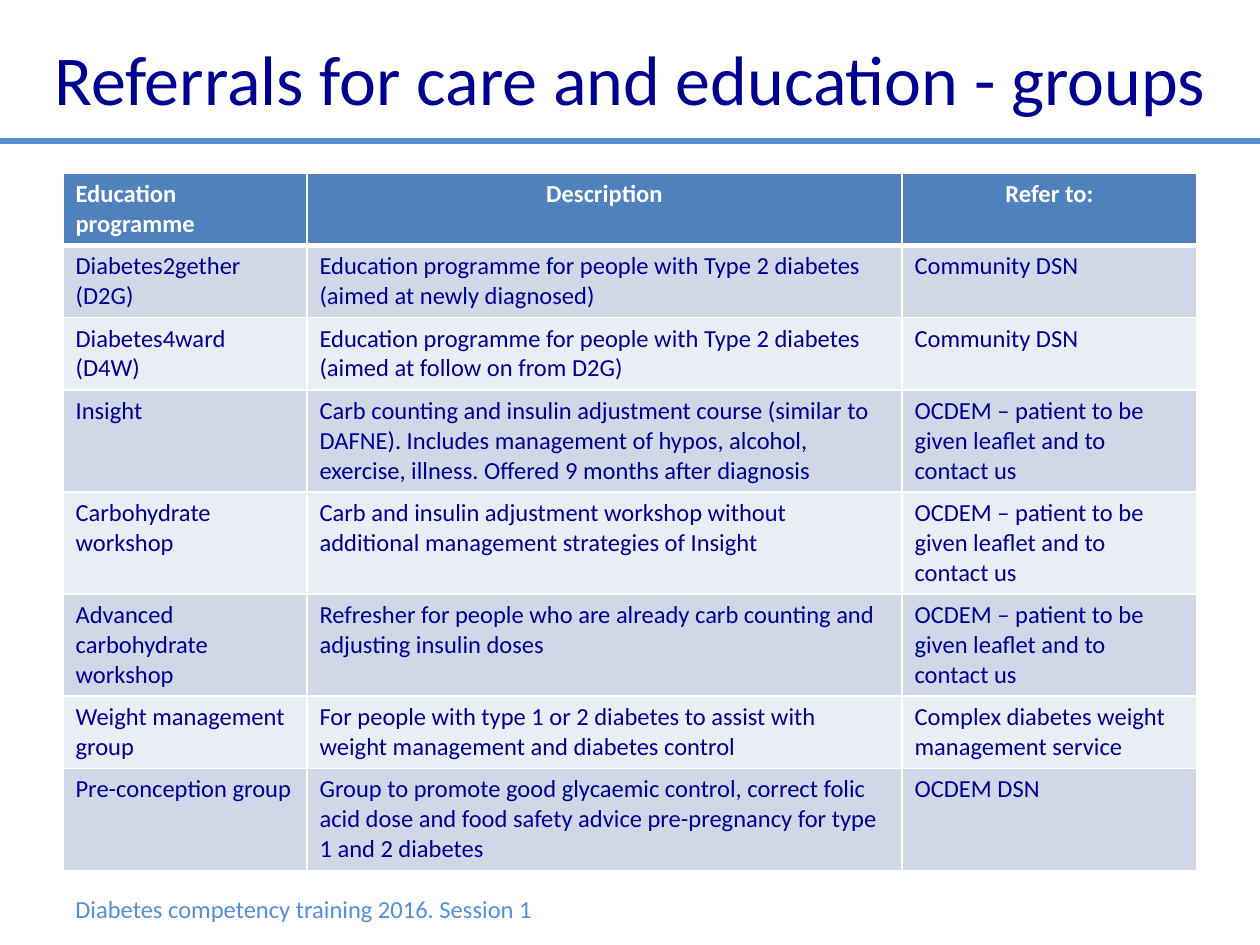
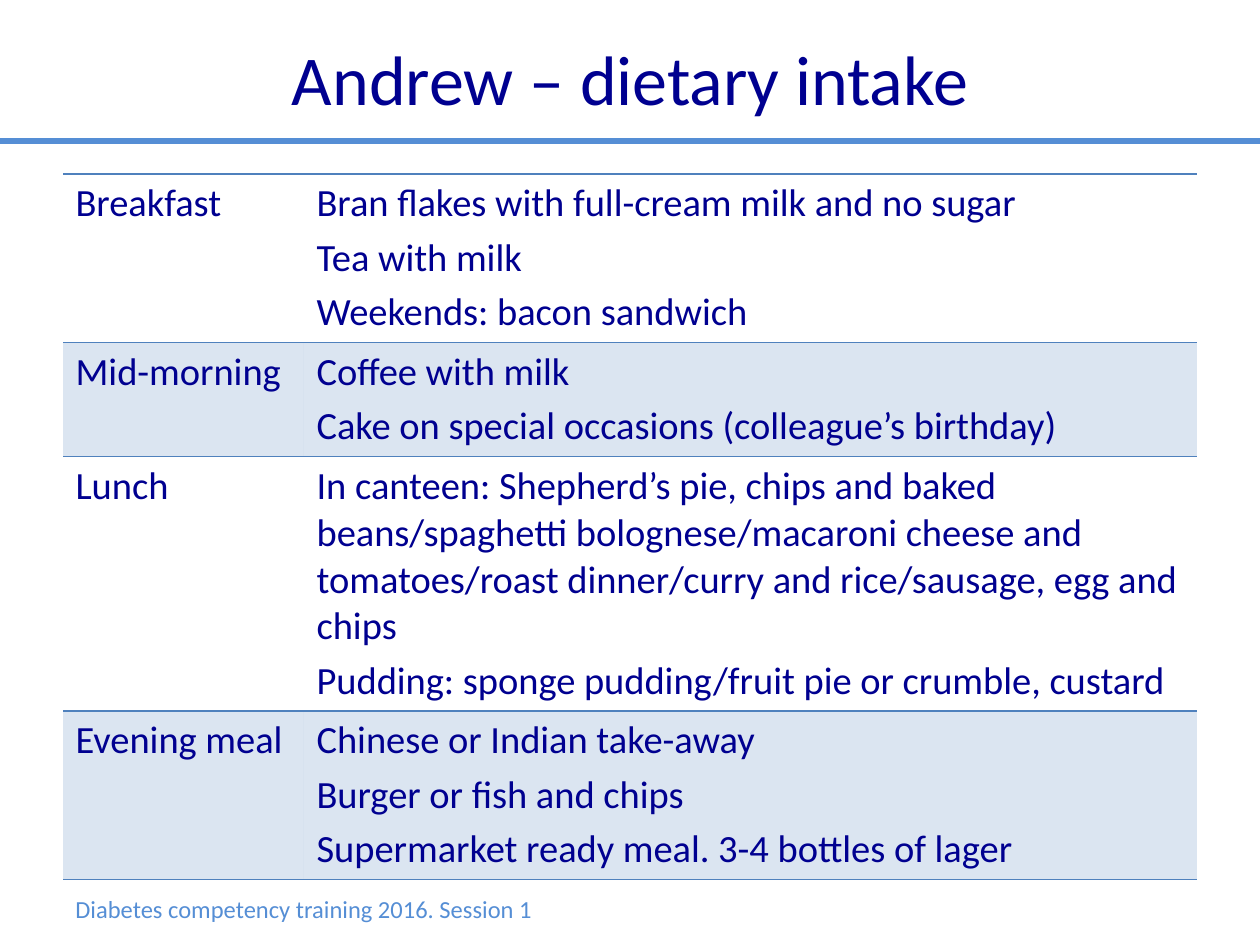
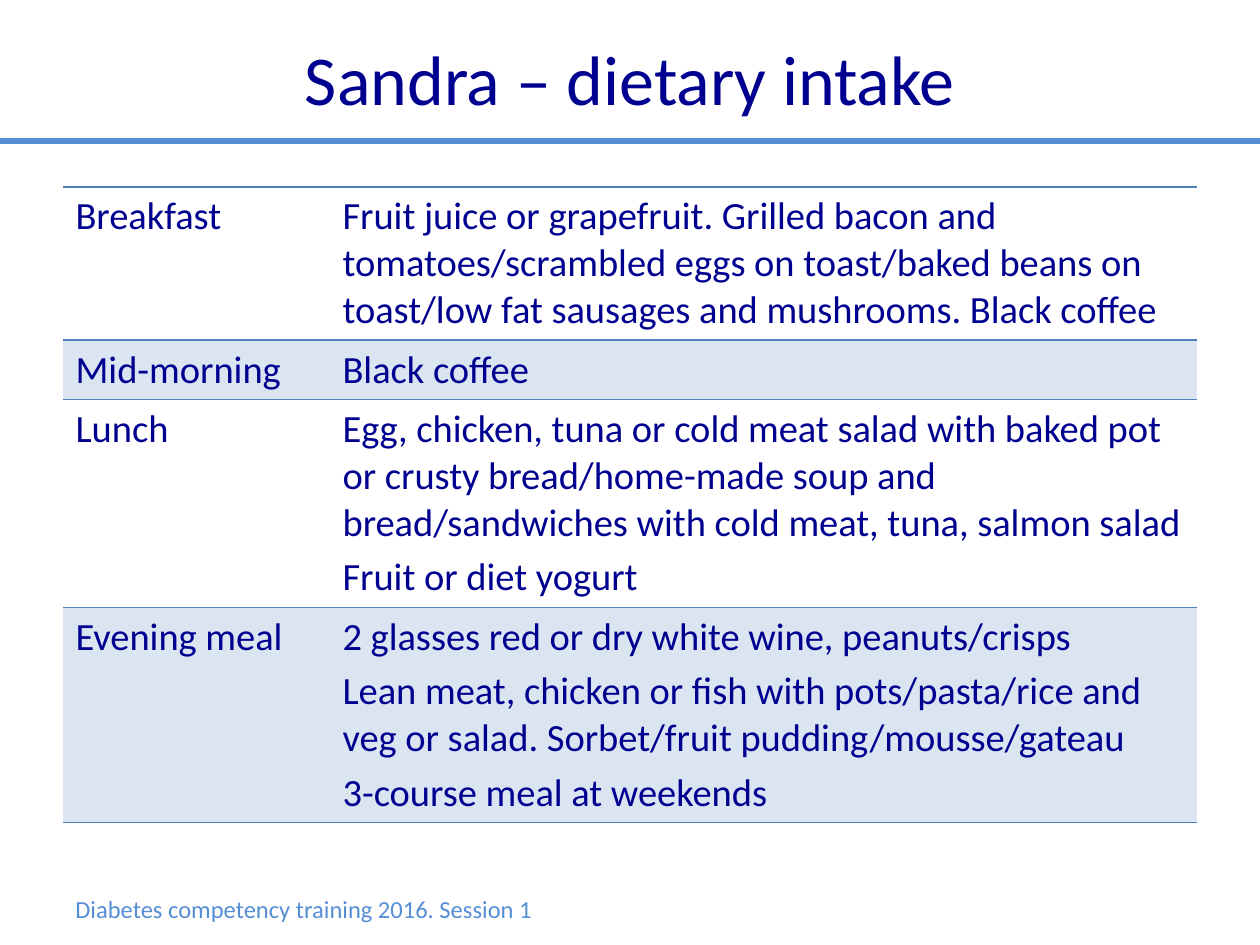
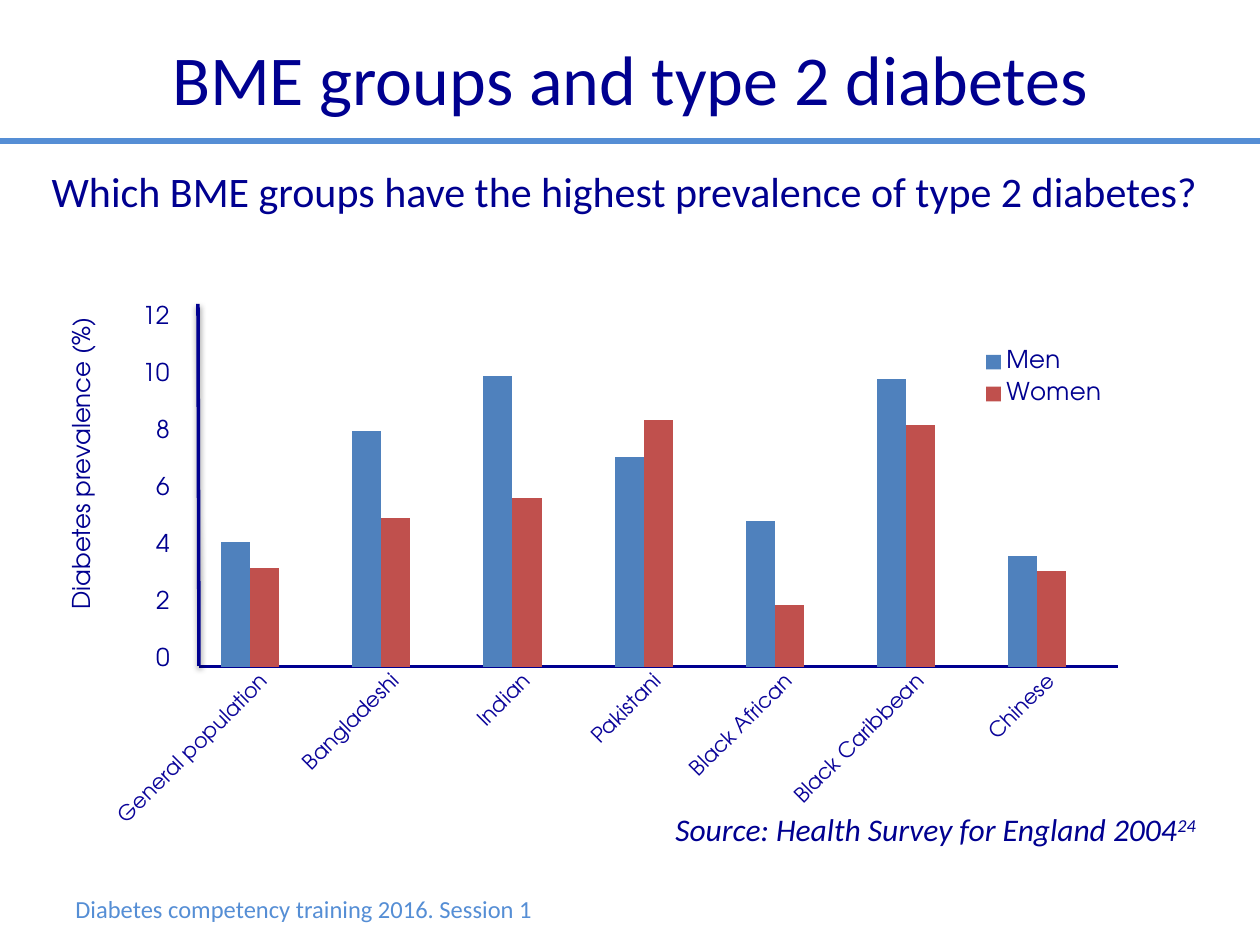
"""Build four diabetes training slides: three tables and a prevalence chart."""
from pptx import Presentation
from pptx.chart.data import CategoryChartData
from pptx.dml.color import RGBColor
from pptx.enum.chart import XL_CHART_TYPE as ChartType
from pptx.enum.chart import XL_LEGEND_POSITION as LegendPosition
from pptx.enum.chart import XL_TICK_MARK as TickMark
from pptx.enum.shapes import MSO_CONNECTOR as Connector
from pptx.enum.text import MSO_ANCHOR as Anchor
from pptx.enum.text import MSO_AUTO_SIZE as AutoSize
from pptx.enum.text import PP_ALIGN as Align
from pptx.oxml import parse_xml
from pptx.oxml.ns import nsdecls
from pptx.util import Pt

EMU_PER_PX = 914400 / 126
SLIDE_WIDTH, SLIDE_HEIGHT = 1260, 945
MARGIN = 63
CONTENT_WIDTH = SLIDE_WIDTH - 2 * MARGIN
RULE_Y = 141
BODY_FONT = "Calibri"
CHART_FONT = "TeX Gyre Adventor"
TITLE_LAYOUT = 5

COLORS = {
    "navy": "000090",
    "axis_text": "0A0399",
    "sky": "558ED5",
    "blue": "4F81BD",
    "red": "C0504D",
    "green": "9BBB59",
    "band_dark": "D0D8E8",
    "band_light": "E9EDF4",
    "white": "FFFFFF",
}

SELF_REFERRAL = "OCDEM – patient to be given leaflet and to contact us"
PROGRAMMES = [
    ("Education programme", "Description", "Refer to:"),
    ("Diabetes2gether (D2G)",
     "Education programme for people with Type 2 diabetes (aimed at newly diagnosed)",
     "Community DSN"),
    ("Diabetes4ward\n(D4W)",
     "Education programme for people with Type 2 diabetes (aimed at follow on from D2G)",
     "Community DSN"),
    ("Insight",
     "Carb counting and insulin adjustment course (similar to DAFNE). Includes management "
     "of hypos, alcohol, exercise, illness. Offered 9 months after diagnosis",
     SELF_REFERRAL),
    ("Carbohydrate workshop",
     "Carb and insulin adjustment workshop without additional management strategies of Insight",
     SELF_REFERRAL),
    ("Advanced carbohydrate workshop",
     "Refresher for people who are already carb counting and adjusting insulin doses",
     SELF_REFERRAL),
    ("Weight management group",
     "For people with type 1 or 2 diabetes to assist with weight management and diabetes control",
     "Complex diabetes weight management service"),
    ("Pre-conception group",
     "Group to promote good glycaemic control, correct folic acid dose and food safety advice "
     "pre-pregnancy for type 1 and 2 diabetes",
     "OCDEM DSN"),
]
ANDREW_MEALS = [
    ("Breakfast",
     "Bran flakes with full-cream milk and no sugar\nTea with milk\nWeekends: bacon sandwich"),
    ("Mid-morning",
     "Coffee with milk\nCake on special occasions (colleague’s birthday)"),
    ("Lunch",
     "In canteen: Shepherd’s pie, chips and baked beans/spaghetti bolognese/macaroni cheese "
     "and tomatoes/roast dinner/curry and rice/sausage, egg and chips\n"
     "Pudding: sponge pudding/fruit pie or crumble, custard"),
    ("Evening meal",
     "Chinese or Indian take-away\nBurger or fish and chips\n"
     "Supermarket ready meal. 3-4 bottles of lager"),
]
SANDRA_MEALS = [
    ("Breakfast",
     "Fruit juice or grapefruit. Grilled bacon and tomatoes/scrambled eggs on toast/baked beans "
     "on toast/low fat sausages and mushrooms. Black coffee"),
    ("Mid-morning", "Black coffee"),
    ("Lunch",
     "Egg, chicken, tuna or cold meat salad with baked pot or crusty bread/home-made soup and "
     "bread/sandwiches with cold meat, tuna, salmon salad\nFruit or diet yogurt"),
    ("Evening meal",
     "2 glasses red or dry white wine, peanuts/crisps\n"
     "Lean meat, chicken or fish with pots/pasta/rice and veg or salad. "
     "Sorbet/fruit pudding/mousse/gateau\n3-course meal at weekends"),
]
ETHNIC_GROUPS = ["General population", "Bangladeshi", "Indian", "Pakistani",
                 "Black African", "Black Caribbean", "Chinese"]
PREVALENCE = [
    ("Men", (43, 81, 100, 72, 50, 99, 38), "blue"),
    ("Women", (34, 51, 58, 85, 21, 83, 33), "red"),
    ("Series 3", (None,) * len(ETHNIC_GROUPS), "green"),
]


def px(length):
    """Turn pixels into EMU."""
    return round(length * EMU_PER_PX)


def rgb(name):
    """Look up a named colour."""
    return RGBColor.from_string(COLORS[name])


def set_font(font, size, color="navy", name=BODY_FONT, bold=False, italic=False):
    """Apply the full set of font properties."""
    font.name, font.size = name, Pt(size)
    font.bold, font.italic = bold, italic
    font.color.rgb = rgb(color)


def add_label(slide, text, box, size, align=Align.LEFT, **font):
    """Add a one-paragraph text box and return it."""
    label = slide.shapes.add_textbox(*map(px, box))
    label.text_frame.word_wrap = True
    paragraph = label.text_frame.paragraphs[0]
    paragraph.text = text
    paragraph.alignment = align
    set_font(paragraph.font, size, **font)
    return label


def add_line(slide, start, end, color, width, effect=""):
    """Add a straight line with only the given effect."""
    line = slide.shapes.add_connector(Connector.STRAIGHT, *map(px, start + end))
    line.line.color.rgb = rgb(color)
    line.line.width = Pt(width)
    line.element.spPr.append(
        parse_xml(f"<a:effectLst {nsdecls('a')}>{effect}</a:effectLst>"))
    return line


def add_master_frame(presentation, slide):
    """Draw the rule and the footer, then move them to the slide master."""
    rule = add_line(slide, (0, RULE_Y), (SLIDE_WIDTH, RULE_Y), "sky", 3)
    footer = add_label(slide, "Diabetes competency training 2016. Session 1",
                       (MARGIN, 888, 488, 43), 14, color="sky")
    master_tree = presentation.slide_master.shapes.element
    for shape_id, shape in enumerate((rule, footer), start=20):
        shape.element.xpath(".//p:cNvPr")[0].set("id", str(shape_id))
        master_tree.append(shape.element)


def add_titled_slide(presentation, text, margin=MARGIN):
    """Add a slide with a centred title above the rule."""
    slide = presentation.slides.add_slide(presentation.slide_layouts[TITLE_LAYOUT])
    title = slide.shapes.title
    title.left, title.top = px(margin), px(14)
    title.width, title.height = px(SLIDE_WIDTH - 2 * margin), px(127)
    frame = title.text_frame
    frame.text = text
    frame.auto_size = AutoSize.NONE
    frame.vertical_anchor = Anchor.MIDDLE
    frame.paragraphs[0].alignment = Align.CENTER
    set_font(frame.paragraphs[0].font, 40)
    return slide


def set_borders(cell, color, **widths):
    """Set the L, R, T and B borders in points, zero meaning none."""
    properties = cell._tc.get_or_add_tcPr()
    for side in "LRTB":
        width = widths[side]
        paint = (f'<a:solidFill><a:srgbClr val="{COLORS[color]}"/></a:solidFill>'
                 if width else "<a:noFill/>")
        properties.append(parse_xml(
            f'<a:ln{side} {nsdecls("a")} w="{Pt(width)}">{paint}</a:ln{side}>'))


def fill_cell(cell, color, alpha=None):
    """Fill a cell, with an opacity in percent if given."""
    cell.fill.solid()
    cell.fill.fore_color.rgb = rgb(color)
    if alpha:
        swatch = cell._tc.tcPr.xpath("a:solidFill/a:srgbClr")[0]
        swatch.append(parse_xml(f'<a:alpha {nsdecls("a")} val="{alpha * 1000}"/>'))


def write_cell(cell, text, size, align=Align.LEFT, gap=0, **font):
    """Write one paragraph per line, with a gap between paragraphs."""
    cell.text_frame.text = text
    for index, paragraph in enumerate(cell.text_frame.paragraphs):
        paragraph.alignment = align
        if index and gap:
            paragraph.space_before = Pt(gap)
        set_font(paragraph.font, size, **font)


def add_grid(slide, top, columns, heights):
    """Add an unstyled table and return it."""
    table = slide.shapes.add_table(len(heights), len(columns), px(MARGIN), px(top),
                                   px(CONTENT_WIDTH), px(sum(heights))).table
    table.first_row = table.horz_banding = False
    for column, width in zip(table.columns, columns):
        column.width = px(width)
    for row, height in zip(table.rows, heights):
        row.height = px(height)
    return table


def add_programme_table(slide):
    """Add the banded table of education programmes."""
    table = add_grid(slide, 173, (244, 595, 295), (72, 72, 72, 102, 102, 102, 72, 102))
    for row, texts in enumerate(PROGRAMMES):
        header = row == 0
        fill = "blue" if header else "band_dark" if row % 2 else "band_light"
        for column, text in enumerate(texts):
            cell = table.cell(row, column)
            write_cell(cell, text, 14, bold=header, color="white" if header else "navy",
                       align=Align.CENTER if header and column else Align.LEFT)
            set_borders(cell, "white", L=1, R=1, T=3 if row == 1 else 1, B=3 if header else 1)
            fill_cell(cell, fill)


def add_meal_table(slide, meals, top, columns, heights):
    """Add a table of meals with ruled rows, every second one tinted."""
    table = add_grid(slide, top, columns, heights)
    for row, texts in enumerate(meals):
        for column, text in enumerate(texts):
            cell = table.cell(row, column)
            write_cell(cell, text, 22, gap=4.4)
            set_borders(cell, "blue", L=0, R=0, T=1, B=1)
            if row % 2:
                fill_cell(cell, "blue", alpha=20)
            else:
                cell.fill.background()


def place_in_chart(parent, index, x, y, width, height, target=""):
    """Give a chart part a manual layout in fractions of the chart."""
    for layout in parent.xpath("c:layout"):
        parent.remove(layout)
    parent.insert(index, parse_xml(
        f'<c:layout {nsdecls("c")}><c:manualLayout>{target}'
        '<c:xMode val="edge"/><c:yMode val="edge"/>'
        f'<c:x val="{x}"/><c:y val="{y}"/><c:w val="{width}"/><c:h val="{height}"/>'
        '</c:manualLayout></c:layout>'))


def format_legend(chart):
    """Show the legend at the upper right for the first two series."""
    chart.has_legend = True
    legend = chart.legend
    legend.position = LegendPosition.RIGHT
    legend.include_in_layout = False
    set_font(legend.font, 14, name=CHART_FONT)
    element = chart.element.xpath(".//c:legend")[0]
    place_in_chart(element, 1, 0.8, 0.08, 0.13, 0.12)
    element.insert(1, parse_xml(
        f'<c:legendEntry {nsdecls("c")}><c:idx val="2"/><c:delete val="1"/></c:legendEntry>'))


def add_prevalence_chart(slide):
    """Add the clustered columns of prevalence by group."""
    data = CategoryChartData()
    data.categories = ETHNIC_GROUPS
    for name, values, _ in PREVALENCE:
        data.add_series(name, values)
    chart = slide.shapes.add_chart(ChartType.COLUMN_CLUSTERED, px(MARGIN), px(294),
                                   px(CONTENT_WIDTH), px(601), data).chart
    chart.has_title = False
    set_font(chart.font, 18)
    plot = chart.plots[0]
    plot.gap_width = 150
    plot.vary_by_categories = False
    for series, (_, _, color) in zip(plot.series, PREVALENCE):
        series.format.fill.solid()
        series.format.fill.fore_color.rgb = rgb(color)

    value_axis = chart.value_axis
    value_axis.minimum_scale, value_axis.maximum_scale = 0, 120
    value_axis.has_major_gridlines = False
    value_axis.visible = False
    category_axis = chart.category_axis
    category_axis.major_tick_mark = category_axis.minor_tick_mark = TickMark.NONE
    category_axis.format.line.color.rgb = rgb("navy")
    category_axis.format.line.width = Pt(2)
    set_font(category_axis.tick_labels.font, 12, color="axis_text", name=CHART_FONT)
    chart.element.xpath(".//c:catAx/c:txPr/a:bodyPr")[0].set("rot", "-2700000")

    place_in_chart(chart.element.xpath(".//c:plotArea")[0], 0, 0.12, 0.04, 0.81, 0.58,
                   '<c:layoutTarget val="inner"/>')
    format_legend(chart)


def add_percent_axis(slide):
    """Add the value labels, the axis title and the shadowed axis line."""
    for step in range(7):
        add_label(slide, str(2 * step), (127, 636 - 57 * step, 55, 43), 14,
                  align=Align.RIGHT, name=CHART_FONT)
    axis_title = add_label(slide, "Diabetes prevalence (%)", (60, 297, 55, 325), 14,
                           name=CHART_FONT)
    axis_title.element.xpath(".//a:bodyPr")[0].set("vert", "vert270")
    shadow = (f'<a:outerShdw blurRad="{Pt(3)}" dist="{Pt(1.6)}" dir="5400000">'
              '<a:srgbClr val="000000"><a:alpha val="38000"/></a:srgbClr></a:outerShdw>')
    add_line(slide, (199, 666), (198, 304), "navy", 2, shadow)


def add_source(slide):
    """Add the source line with its raised reference number."""
    source = add_label(slide, "Source: Health Survey for England 2004",
                       (663, 804, 580, 50), 18, italic=True)
    reference = source.text_frame.paragraphs[0].add_run()
    reference.text = "24"
    reference._r.get_or_add_rPr().set("baseline", "30000")


def main():
    """Build and save the presentation."""
    presentation = Presentation()
    presentation.slide_width, presentation.slide_height = px(SLIDE_WIDTH), px(SLIDE_HEIGHT)

    slide = add_titled_slide(presentation, "Referrals for care and education - groups", margin=0)
    add_master_frame(presentation, slide)
    add_programme_table(slide)

    slide = add_titled_slide(presentation, "Andrew – dietary intake")
    add_meal_table(slide, ANDREW_MEALS, 174, (241, 893), (168, 114, 254, 168))

    slide = add_titled_slide(presentation, "Sandra – dietary intake")
    add_meal_table(slide, SANDRA_MEALS, 187, (267, 867), (153, 59, 207, 215))

    slide = add_titled_slide(presentation, "BME groups and type 2 diabetes")
    add_label(slide, "Which BME groups have the highest prevalence of type 2 diabetes?",
              (31, 159, 1187, 63), 24, align=Align.CENTER)
    add_prevalence_chart(slide)
    add_percent_axis(slide)
    add_source(slide)

    presentation.save("out.pptx")


if __name__ == "__main__":
    main()
